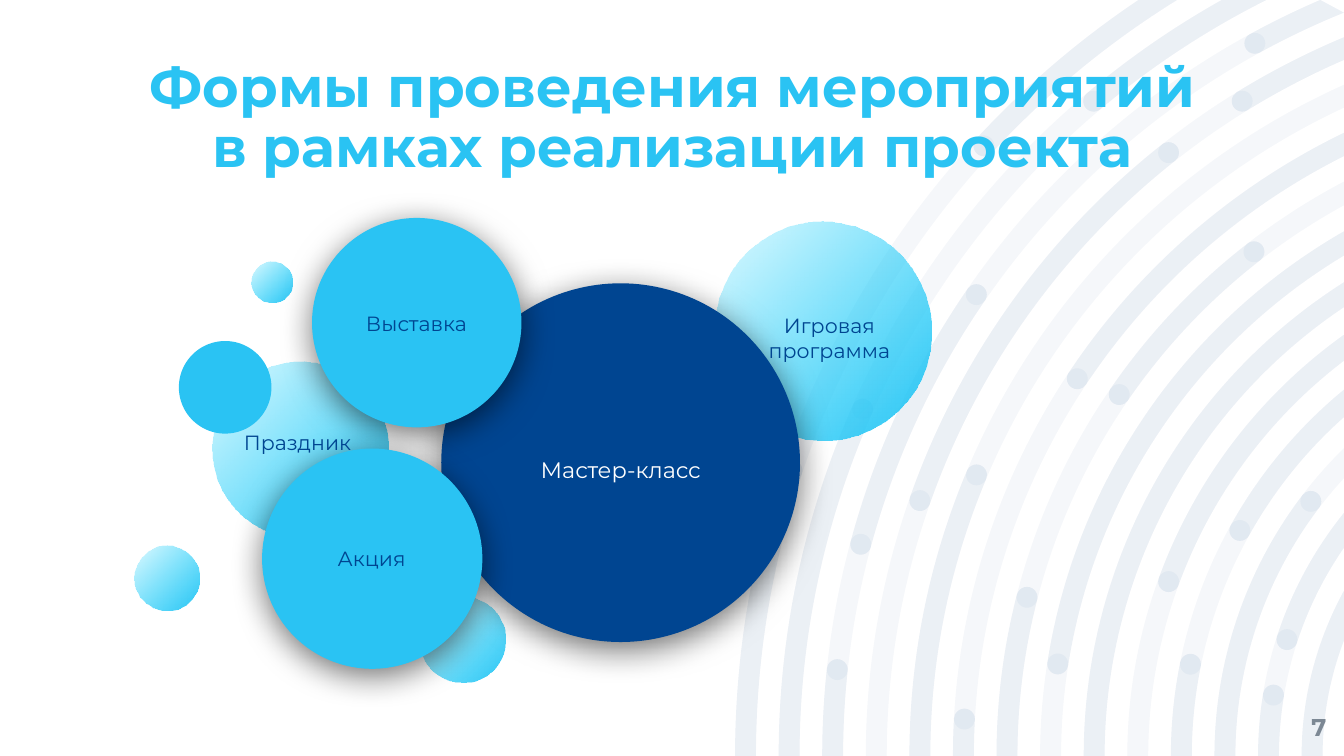
import math
import pptx
import pptx.dml.color
import pptx.enum.shapes
import pptx.enum.text
import pptx.oxml
import pptx.oxml.ns
import pptx.util

Pt = pptx.util.Pt
ANCHOR = pptx.enum.text.MSO_ANCHOR
ALIGN = pptx.enum.text.PP_ALIGN
OVAL = pptx.enum.shapes.MSO_SHAPE.OVAL
NAMESPACE = pptx.oxml.ns.nsdecls("a")
COLOURS = {"navy": "004591", "sky": "2AC3F3", "aqua": "00D0FF",
           "white": "FFFFFF", "grey": "7C8894", "black": "000000"}

presentation = pptx.Presentation()
presentation.slide_width, presentation.slide_height = Pt(720), Pt(405)
slide = presentation.slides.add_slide(presentation.slide_layouts[6])


def style_shape(shape, colour, alpha=None):
    """Give a flat fill without line or shadow; alpha is in percent."""
    shape.shadow.inherit = False
    shape.line.fill.background()
    shape.fill.solid()
    shape.fill.fore_color.rgb = pptx.dml.color.RGBColor.from_string(COLOURS[colour])
    if alpha:
        colour_element = shape.fill._xPr.find(".//" + pptx.oxml.ns.qn("a:srgbClr"))
        colour_element.append(pptx.oxml.parse_xml(f'<a:alpha {NAMESPACE} val="{alpha * 1000}"/>'))


def add_label(text, box, size, colour, align=ALIGN.CENTER, anchor=ANCHOR.MIDDLE, inset=7.2, bold=False):
    shape = slide.shapes.add_textbox(*map(Pt, box))
    frame = shape.text_frame
    frame.word_wrap = True
    frame.vertical_anchor = anchor
    frame.margin_left = frame.margin_right = frame.margin_top = frame.margin_bottom = Pt(inset)
    paragraph = frame.paragraphs[0]
    paragraph.text = text
    paragraph.alignment = align
    paragraph.font.name = "Montserrat"
    paragraph.font.size = Pt(size)
    paragraph.font.bold = bold
    paragraph.font.color.rgb = pptx.dml.color.RGBColor.from_string(COLOURS[colour])
    return paragraph


# Concentric rings around a centre beyond the right edge, cut off by the slide.
# Angles are degrees up from the left; None means "until the ring leaves the slide".
RINGS_LEFT = 487.5
CENTRE_X, CENTRE_Y = 881.3, 405
FIRST_RADIUS, RING_STEP, HALF_WIDTH = 481.9, 23.35, 5.6
accents = [
    [(0, 18.5), (42.7, None)],
    [(0, 23.9), (49.9, None)],
    [(0, 6.1), (15.1, 34.6), (61.3, None)],
    [(19.4, 51.7), (58.4, None)],
    [(0, 22.8)],
    [(0, 3.1), (33.6, None)],
    [(0, 14.4), (34.5, 52.2)],
    [(8.9, None)],
    [(0, None)],
    [(20.1, None)],
    [(0, 11.4), (29.1, None)],
    [(0, 37.3)],
    [(0, 9.3), (18, None)],
    [(0, None)],
]
full_rings = [[(0, None)] for _ in accents]
POINT = '<a:{0}><a:pt x="{1}" y="{2}"/></a:{0}>'
ARC = '<a:arcTo wR="{0}" hR="{0}" stAng="{1:.0f}" swAng="{2:.0f}"/>'
DEGREE = 60000
cap_radius = Pt(HALF_WIDTH)
dot_outlines = []
layers = []
for rings in (full_rings, accents):
    outlines = []
    for ring, arcs in enumerate(rings):
        radius = FIRST_RADIUS - ring * RING_STEP
        outer, inner = radius + HALF_WIDTH, radius - HALF_WIDTH
        exits = [math.degrees(min(math.acos((CENTRE_X - 720) / edge), math.asin(min(1, CENTRE_Y / edge))))
                 for edge in (outer, inner)]
        for start, end in arcs:
            outer_end, inner_end = exits if end is None else (end, end)
            corners = [(Pt(CENTRE_X - RINGS_LEFT - edge * math.cos(math.radians(angle))),
                        Pt(CENTRE_Y - edge * math.sin(math.radians(angle))))
                       for edge, angle in ((outer, start), (inner, inner_end), (outer, end or 0))]
            outline = POINT.format("moveTo", *corners[0])
            outline += ARC.format(Pt(outer), (180 + start) * DEGREE, (outer_end - start) * DEGREE)
            if end is None:
                outline += POINT.format("lnTo", *corners[1])
            else:
                outline += ARC.format(cap_radius, (180 + end) * DEGREE, 180 * DEGREE)
            outline += ARC.format(Pt(inner), (180 + inner_end) * DEGREE, (start - inner_end) * DEGREE)
            if start:
                outline += ARC.format(cap_radius, start * DEGREE, 180 * DEGREE)
            outlines.append(outline + "<a:close/>")
            for angle, corner in ((start, corners[0]), (end, corners[2])):
                if angle:
                    dot_outlines.append(
                        POINT.format("moveTo", *corner)
                        + ARC.format(cap_radius, (180 + angle) * DEGREE, 180 * DEGREE)
                        + ARC.format(cap_radius, angle * DEGREE, 180 * DEGREE) + "<a:close/>")
    layers.append(outlines)

for outlines in (*layers, dot_outlines):
    builder = slide.shapes.build_freeform(Pt(RINGS_LEFT), 0)
    builder.add_line_segments([(Pt(720), 0), (Pt(720), Pt(405)), (Pt(RINGS_LEFT), Pt(405))])
    decoration = builder.convert_to_shape()
    outline_element = decoration._element.find(".//" + pptx.oxml.ns.qn("a:path"))
    for child in list(outline_element):
        outline_element.remove(child)
    for child in list(pptx.oxml.parse_xml(f"<a:path {NAMESPACE}>{''.join(outlines)}</a:path>")):
        outline_element.append(child)
    style_shape(decoration, "navy", 4)

title = add_label("Формы проведения мероприятий в рамках реализации проекта", (67.7, 65.5, 585.4, 31),
                  30, "sky", anchor=ANCHOR.BOTTOM, inset=0, bold=True)
title.line_spacing = 0.9
add_label("7", (667.4, 373.7, 43.2, 31), 13, "grey", align=ALIGN.RIGHT, inset=0, bold=True)

GRADIENT = f"""<a:gradFill {NAMESPACE} rotWithShape="1"><a:gsLst>
<a:gs pos="0"><a:srgbClr val="{COLOURS['sky']}"/></a:gs>
<a:gs pos="100000"><a:srgbClr val="{COLOURS['aqua']}"><a:alpha val="12000"/></a:srgbClr></a:gs>
</a:gsLst><a:path path="circle"><a:fillToRect l="100000" t="100000"/></a:path></a:gradFill>"""
bubbles = [  # left, top, width, height, has gradient
    (224.6, 319.7, 46.1, 46.1, True),
    (72, 292.5, 34.8, 34.8, True),
    (113.8, 193.7, 94.3, 94.3, True),
    (382.5, 119.2, 117.1, 116.2, True),
    (95.8, 182.7, 49.6, 49.6, False),
    (134.6, 140.2, 21.9, 21.9, True),
]
for *box, has_gradient in bubbles:
    bubble = slide.shapes.add_shape(OVAL, *map(Pt, box))
    bubble.rotation = 250
    style_shape(bubble, "sky")
    if has_gradient:
        solid_fill = bubble.fill._xPr.find(pptx.oxml.ns.qn("a:solidFill"))
        solid_fill.getparent().replace(solid_fill, pptx.oxml.parse_xml(GRADIENT))

SHADOW = f"""<a:outerShdw {NAMESPACE} blurRad="{Pt(18)}" dist="{Pt(4)}" dir="5400000" algn="bl" rotWithShape="0">
<a:srgbClr val="{COLOURS['black']}"><a:alpha val="55000"/></a:srgbClr></a:outerShdw>"""
main_circles = [  # text, left, top, diameter, fill, label box, text size, text colour
    ("Мастер-класс", 236.4, 151.8, 192.2, "navy", (259.2, 205.9, 146.9, 91.4), 12, "white"),
    ("Выставка", 167.2, 116.8, 112.2, "sky", (185, 136.2, 76.3, 74.2), 11, "navy"),
    ("Акция", 140.4, 240.3, 118, "sky", (157, 262.2, 84.2, 74.2), 11, "navy"),
]
for text, left, top, diameter, fill, label_box, size, text_colour in main_circles:
    circle = slide.shapes.add_shape(OVAL, Pt(left), Pt(top), Pt(diameter), Pt(diameter))
    style_shape(circle, fill)
    circle._element.spPr.find(pptx.oxml.ns.qn("a:effectLst")).append(pptx.oxml.parse_xml(SHADOW))
    add_label(text, label_box, size, text_colour)

add_label("Игровая программа", (402.3, 142.5, 84.2, 77), 11, "navy")
add_label("Праздник", (121.3, 198.7, 76.3, 77), 11, "navy")

presentation.save("out.pptx")
